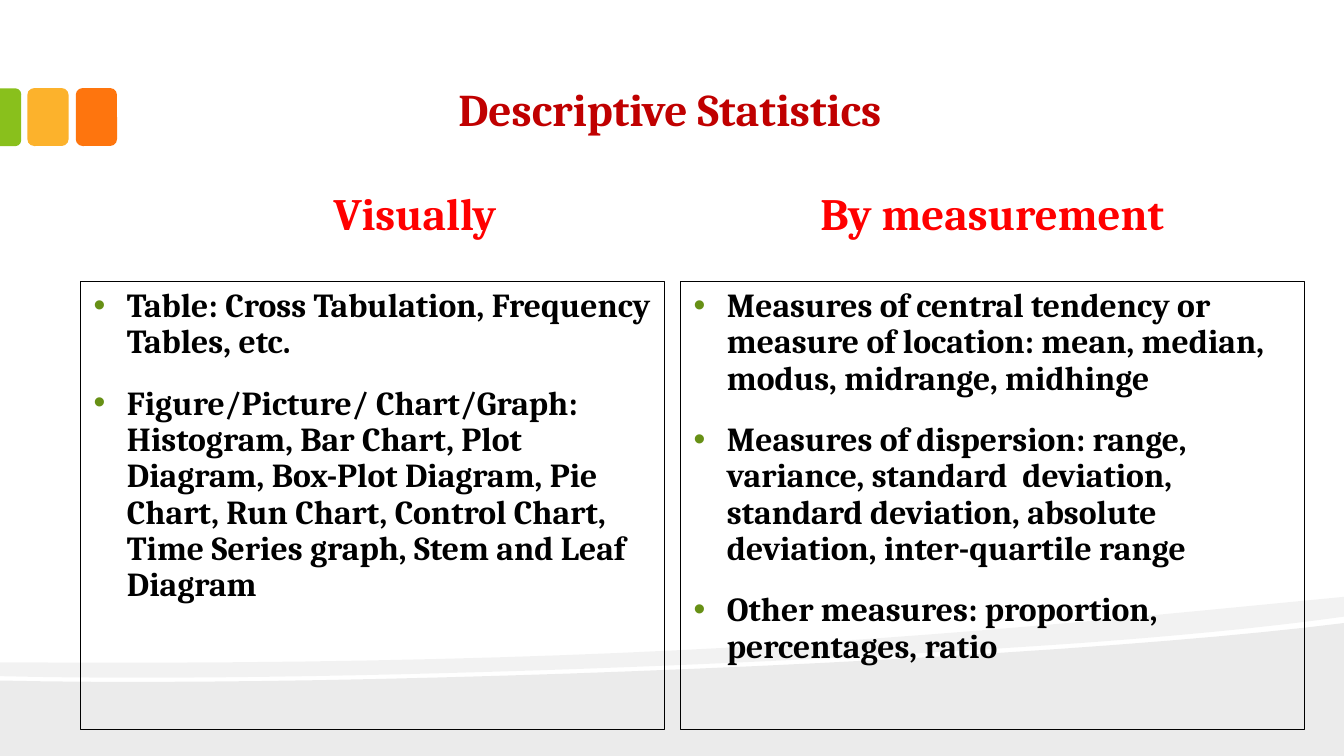
"""Build the Descriptive Statistics slide with two bulleted comparison boxes."""
from dataclasses import dataclass

from lxml import etree
from pptx import Presentation
from pptx.dml.color import RGBColor
from pptx.enum.shapes import MSO_SHAPE
from pptx.enum.text import MSO_ANCHOR, MSO_AUTO_SIZE, PP_ALIGN
from pptx.oxml.ns import qn
from pptx.shapes.autoshape import Shape
from pptx.slide import Slide
from pptx.text.text import TextFrame
from pptx.util import Cm, Pt

ROUNDED = MSO_SHAPE.ROUNDED_RECTANGLE
ROUNDED_TOP = MSO_SHAPE.ROUND_2_SAME_RECTANGLE
TOP, BOTTOM = MSO_ANCHOR.TOP, MSO_ANCHOR.BOTTOM
CENTER, LEFT = PP_ALIGN.CENTER, PP_ALIGN.LEFT
NO_AUTOFIT = MSO_AUTO_SIZE.NONE

FONT = "Cambria"
COLORS = {
    "title": "C00000",
    "heading": "FF0000",
    "text": "000000",
    "bullet": "679015",
    "orange": "FE750E",
    "yellow": "FCB22C",
    "green": "89C01C",
    "wave": "000000",
}
CURVE_STEPS = 24
Point = tuple[float, float]


@dataclass
class Box:
    left: float
    top: float
    width: float
    height: float

    def lengths(self) -> tuple[Cm, Cm, Cm, Cm]:
        return Cm(self.left), Cm(self.top), Cm(self.width), Cm(self.height)


@dataclass
class Tile:
    box: Box
    color: str
    kind: MSO_SHAPE = ROUNDED
    rotation: float = 0


@dataclass
class Wave:
    segments: list[list[Point]]
    opacity: int


@dataclass
class Column:
    heading: str
    heading_box: Box
    body_box: Box
    items: list[str]


WAVES = [
    Wave([[(33.87, 15.7)], [(33.87, 19.05)], [(0, 19.05)], [(0, 17.15)],
          [(8.94, 17.35), (26.47, 16.64), (33.87, 15.7)]], 8),
    Wave([[(33.87, 15.04)], [(33.87, 15.54)],
          [(31.88, 15.82), (29.18, 16.08), (26.14, 16.28)],
          [(17.73, 16.84), (6.55, 17.2), (0, 17.04)], [(0, 16.69)],
          [(16.56, 16.81), (24.66, 15.93), (33.87, 15.04)]], 5),
]
TILES = [
    Tile(Box(1.91, 2.22, 1.04, 1.46), "orange"),
    Tile(Box(0.69, 2.22, 1.04, 1.46), "yellow"),
    Tile(Box(-0.46, 2.69, 1.46, 0.53), "green", ROUNDED_TOP, 90),
]
TITLE_BOX = Box(3.56, 1.88, 26.64, 1.73)
COLUMNS = [
    Column("Visually", Box(5.94, 4.55, 9.04, 1.63), Box(2.03, 7.09, 14.71, 11.3), [
        "Table: Cross Tabulation, Frequency Tables, etc.",
        "Figure/Picture/ Chart/Graph: Histogram, Bar Chart, Plot Diagram, "
        "Box-Plot Diagram, Pie Chart, Run Chart, Control Chart, "
        "Time Series graph, Stem and Leaf Diagram",
    ]),
    Column("By measurement", Box(17.15, 4.55, 15.72, 1.63), Box(17.15, 7.09, 15.72, 11.3), [
        "Measures of central tendency or measure of location: "
        "mean, median, modus, midrange, midhinge",
        "Measures of dispersion: range, variance, standard  deviation, "
        "standard deviation, absolute deviation, inter-quartile range",
        "Other measures: proportion, percentages, ratio",
    ]),
]


def color_of(name: str) -> RGBColor:
    return RGBColor.from_string(COLORS[name])


def paint(shape: Shape, color: str) -> None:
    shape.shadow.inherit = False
    shape.fill.solid()
    shape.fill.fore_color.rgb = color_of(color)
    shape.line.fill.background()


def curve_points(start: Point, segment: list[Point]) -> list[Point]:
    if len(segment) == 1:
        return segment
    controls = [start, *segment]
    points = []
    for step in range(1, CURVE_STEPS + 1):
        t = step / CURVE_STEPS
        weights = ((1 - t) ** 3, 3 * t * (1 - t) ** 2, 3 * t**2 * (1 - t), t**3)
        x, y = (sum(w * p[axis] for w, p in zip(weights, controls)) for axis in (0, 1))
        points.append((x, y))
    return points


def draw_wave(slide: Slide, wave: Wave) -> None:
    points = list(wave.segments[0])
    for segment in wave.segments[1:]:
        points += curve_points(points[-1], segment)
    outline = [(Cm(x), Cm(y)) for x, y in points]
    builder = slide.shapes.build_freeform(*outline[0])
    builder.add_line_segments(outline[1:], close=True)
    shape = builder.convert_to_shape()
    paint(shape, "wave")
    fill_color = shape._element.spPr.find(qn("a:solidFill"))[0]
    etree.SubElement(fill_color, qn("a:alpha"), val=str(wave.opacity * 1000))


def draw_tile(slide: Slide, tile: Tile) -> None:
    shape = slide.shapes.add_shape(tile.kind, *tile.box.lengths())
    shape.rotation = tile.rotation
    if tile.kind == ROUNDED_TOP:
        shape.adjustments[0] = 0.29
    paint(shape, tile.color)


def write(frame: TextFrame, lines: list[str], size: float, color: str,
          alignment: PP_ALIGN = CENTER) -> None:
    frame.word_wrap = True
    frame.text = "\n".join(lines)
    for paragraph in frame.paragraphs:
        paragraph.alignment = alignment
        font = paragraph.font
        font.name, font.size, font.bold = FONT, Pt(size), True
        font.color.rgb = color_of(color)


def place(slide: Slide, shape: Shape, box: Box, anchor: MSO_ANCHOR) -> None:
    slide.shapes._spTree.append(shape._element)
    shape.left, shape.top, shape.width, shape.height = box.lengths()
    frame = shape.text_frame
    frame.auto_size, frame.vertical_anchor = NO_AUTOFIT, anchor
    frame.margin_left = frame.margin_right = Cm(0.33)
    frame.margin_top = frame.margin_bottom = Cm(0.18)


def add_bullets(frame: TextFrame) -> None:
    for paragraph in frame.paragraphs:
        paragraph.line_spacing, paragraph.space_before = 0.9, Pt(18)
        properties = paragraph._p.get_or_add_pPr()
        properties.set("marL", str(Cm(0.84)))
        properties.set("indent", str(-Cm(0.84)))
        bullet_color = etree.Element(qn("a:buClr"))
        etree.SubElement(bullet_color, qn("a:srgbClr"), val=COLORS["bullet"])
        bullet_font = etree.Element(qn("a:buFont"), typeface="Arial")
        bullet = etree.Element(qn("a:buChar"), char="•")
        for element in (bullet_color, bullet_font, bullet):
            properties.find(qn("a:defRPr")).addprevious(element)


def draw_column(slide: Slide, column: Column, body: Shape) -> None:
    place(slide, body, column.body_box, TOP)
    body.line.color.rgb = color_of("text")
    body.line.width = Pt(0.75)
    write(body.text_frame, column.items, 24, "text", LEFT)
    add_bullets(body.text_frame)
    heading = slide.shapes.add_textbox(*column.heading_box.lengths())
    write(heading.text_frame, [column.heading], 32, "heading")


def main() -> None:
    presentation = Presentation()
    presentation.slide_width, presentation.slide_height = Cm(33.87), Cm(19.05)
    slide = presentation.slides.add_slide(presentation.slide_layouts.get_by_name("Two Content"))
    title, *bodies = slide.placeholders
    for wave in WAVES:
        draw_wave(slide, wave)
    for tile in TILES:
        draw_tile(slide, tile)
    place(slide, title, TITLE_BOX, BOTTOM)
    write(title.text_frame, ["Descriptive Statistics"], 32.4, "title")
    for column, body in zip(COLUMNS, bodies):
        draw_column(slide, column, body)
    presentation.save("out.pptx")


if __name__ == "__main__":
    main()
